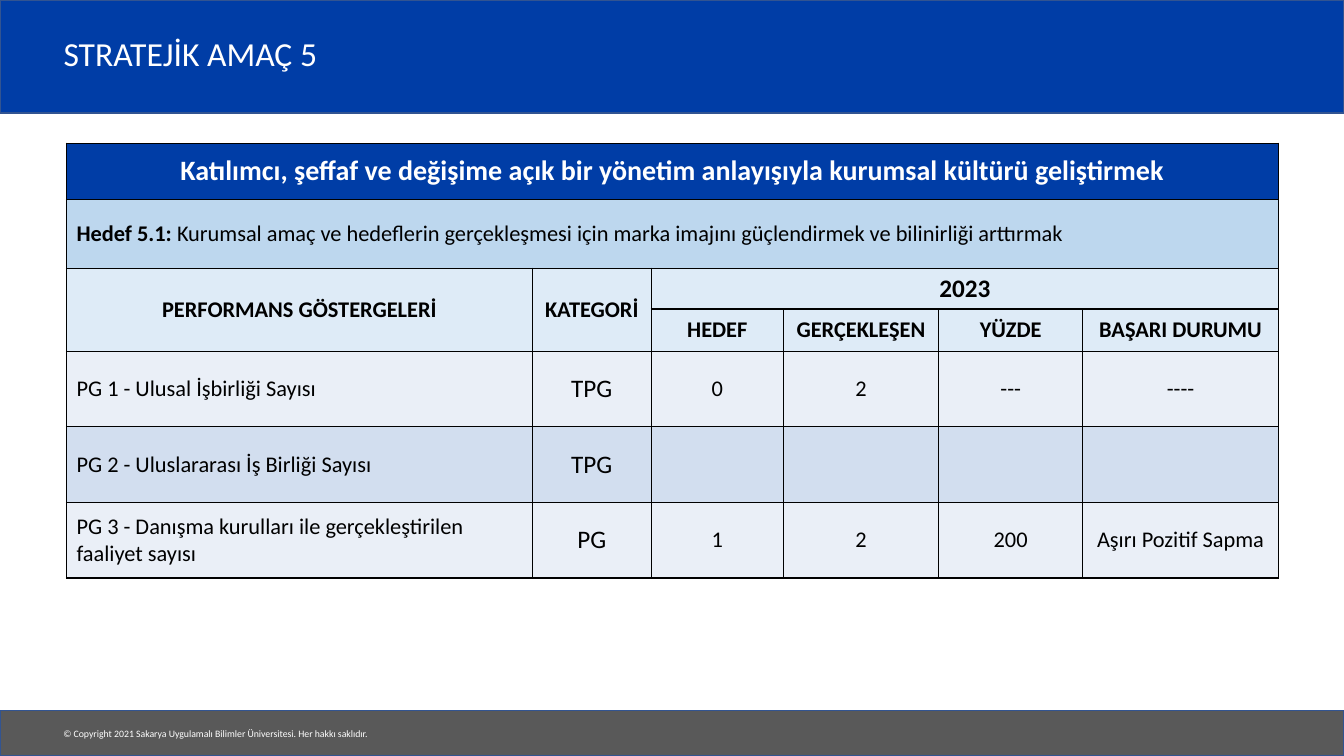
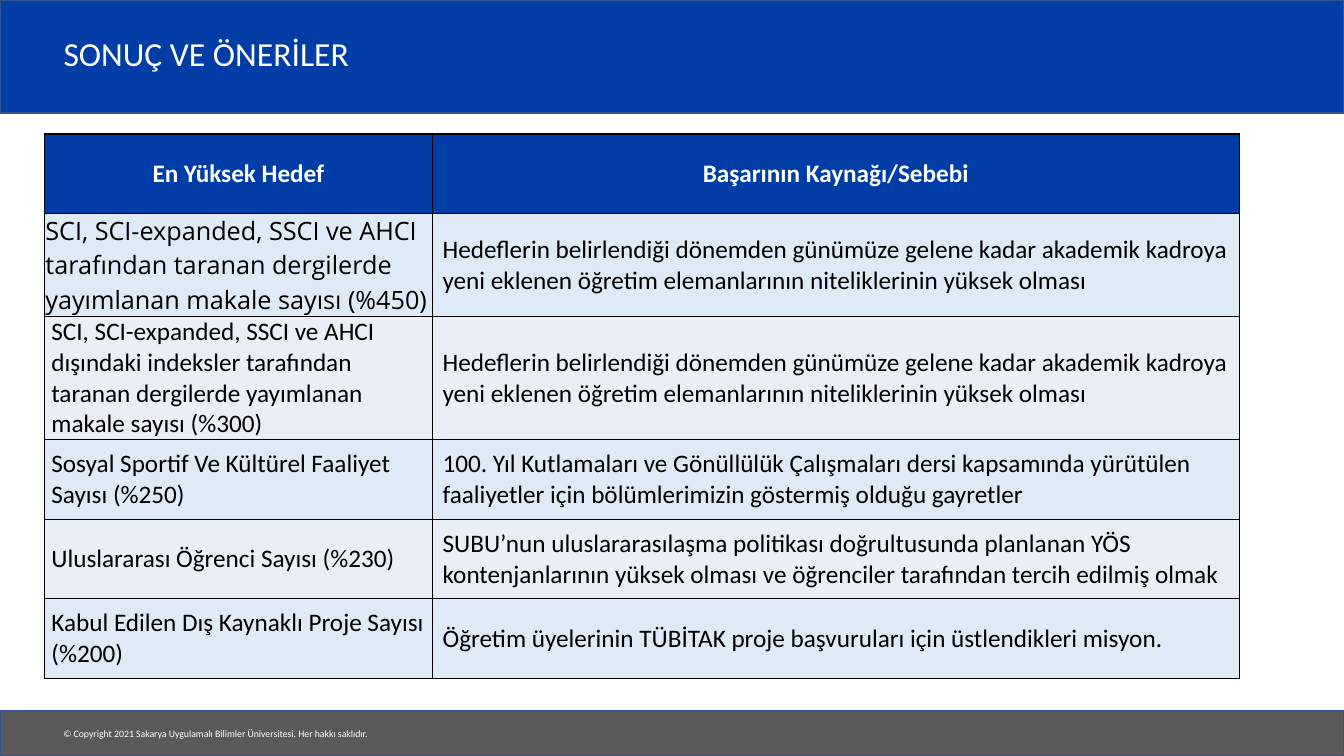
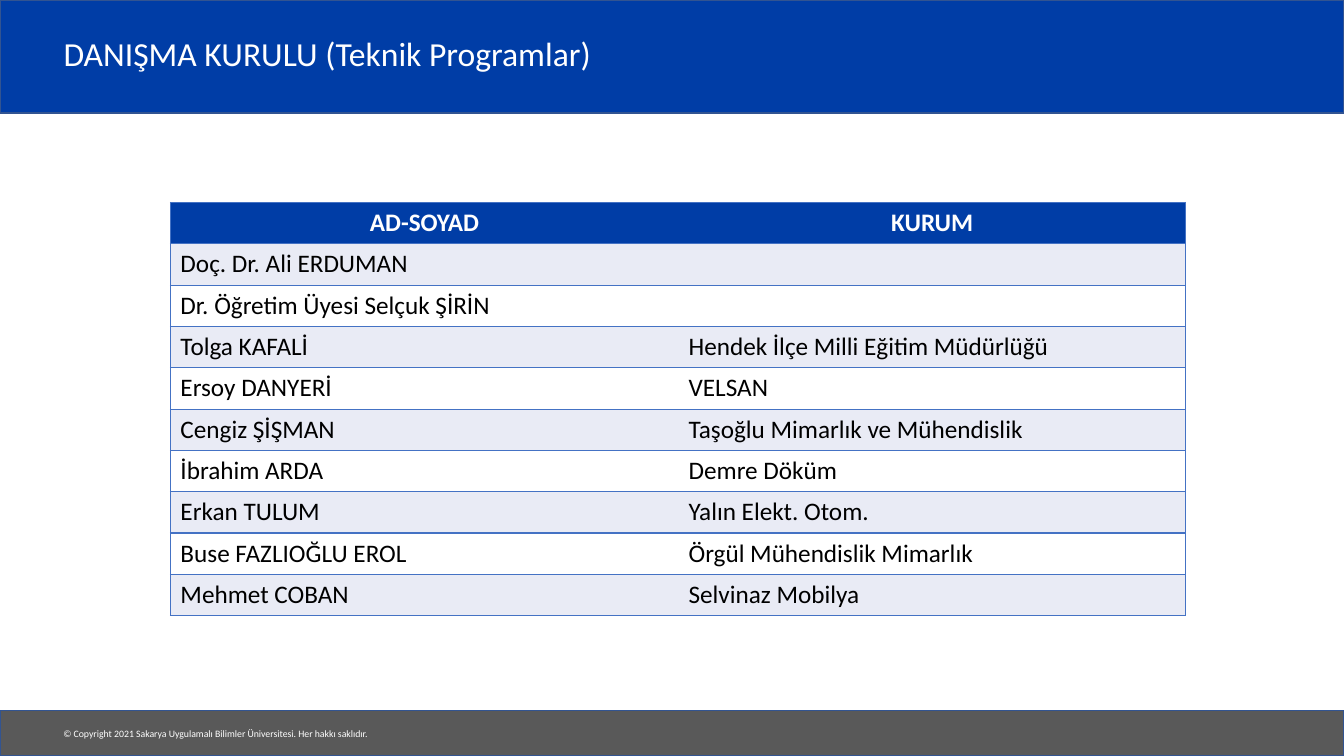
from lxml.etree import SubElement
from pptx import Presentation
from pptx.dml.color import RGBColor
from pptx.enum.shapes import MSO_SHAPE
from pptx.enum.text import MSO_ANCHOR, MSO_AUTO_SIZE, PP_ALIGN
from pptx.oxml.ns import qn
from pptx.util import Inches, Pt

COLORS = {
    "blue": "003DA6", "gray": "595959", "band_line": "325491",
    "white": "FFFFFF", "black": "000000", "sky": "BDD7EE",
    "pale_blue": "DEEBF7", "pale_gray": "EAEFF7", "mid_blue": "D2DEEF",
    "lavender": "E9EBF5", "grid_blue": "4472C4",
}
FONT = "Calibri"
WIDTH, HEIGHT = 13.33, 7.5
CENTER, LEFT = PP_ALIGN.CENTER, PP_ALIGN.LEFT
COPYRIGHT = "© Copyright 2021 Sakarya Uygulamalı Bilimler Üniversitesi. Her hakkı saklıdır."


def color(name):
    return RGBColor.from_string(COLORS[name])


def format_para(para, size, ink="black", bold=False, align=LEFT, face=FONT):
    para.alignment = align
    para.font.name = face
    para.font.size = Pt(size)
    para.font.bold = bold
    para.font.color.rgb = color(ink)


def add_band(page, top, height, fill):
    band = page.shapes.add_shape(
        MSO_SHAPE.RECTANGLE, 0, Inches(top), Inches(WIDTH), Inches(height))
    band.shadow.inherit = False
    band.fill.solid()
    band.fill.fore_color.rgb = color(fill)
    band.line.color.rgb = color("band_line")
    band.line.width = Pt(1)
    return band


def add_copyright(page):
    box = page.shapes.add_textbox(Inches(0.53), Inches(7.17), Inches(3.29), Inches(0.22))
    box.text_frame.word_wrap = False
    para = box.text_frame.paragraphs[0]
    para.text = COPYRIGHT
    format_para(para, 7, "white")
    return box


def furnish_layout(layout, page):
    """Draw the bands and footer on a page, then hand them to its layout."""
    parts = [add_band(page, 0, 1.12, "blue"),
             add_band(page, 7.05, 0.45, "gray"),
             add_copyright(page)]
    for part in parts:
        layout.shapes.element.append(part.element)


def add_page(deck, layout, heading):
    page = deck.slides.add_slide(layout)
    title = page.shapes.title
    title.left, title.top = Inches(0.53), Inches(0.19)
    title.width, title.height = Inches(11.03), Inches(0.73)
    frame = title.text_frame
    frame.text = heading
    frame.auto_size = MSO_AUTO_SIZE.NONE
    frame.vertical_anchor = MSO_ANCHOR.MIDDLE
    format_para(frame.paragraphs[0], 24, "white")
    frame.paragraphs[0].line_spacing = 0.9
    return page


def add_grid(page, left, top, widths, heights):
    frame = page.shapes.add_table(
        len(heights), len(widths), Inches(left), Inches(top),
        Inches(sum(widths)), Inches(sum(heights)))
    table = frame.table
    table.first_row = table.horz_banding = False
    for column, width in zip(table.columns, widths):
        column.width = Inches(width)
    for row, height in zip(table.rows, heights):
        row.height = Inches(height)
    return table


def paint_cell(cell, fill, line, sides="LRTB"):
    """Fill a cell and rule the given sides, leaving the others bare."""
    cell.fill.solid()
    cell.fill.fore_color.rgb = color(fill)
    props = cell._tc.get_or_add_tcPr()
    for index, side in enumerate("LRTB"):
        border = SubElement(props, qn(f"a:ln{side}"), w=str(Pt(1)))
        props.insert(index, border)
        if side in sides:
            solid = SubElement(border, qn("a:solidFill"))
            SubElement(solid, qn("a:srgbClr"), val=COLORS[line])
        else:
            SubElement(border, qn("a:noFill"))


def write_cell(cell, text, size=18, anchor=MSO_ANCHOR.MIDDLE, **style):
    cell.vertical_anchor = anchor
    para = cell.text_frame.paragraphs[0]
    para.text = text
    format_para(para, size, **style)


def set_margins(cell, side, vertical):
    cell.margin_left = cell.margin_right = Inches(side)
    cell.margin_top = cell.margin_bottom = Inches(vertical)


def add_goal_table(page, left, top):
    table = add_grid(page, left, top, [4.62, 1.18, 1.31, 1.54, 1.43, 1.94],
                     [0.56, 0.68, 0.4, 0.42, 0.75, 0.75, 0.75])
    fills = ["blue", "sky", "pale_blue", "pale_blue", "pale_gray", "mid_blue", "pale_gray"]
    for row, fill in zip(table.rows, fills):
        for cell in row.cells:
            paint_cell(cell, fill, "black")
    for first, last in [((0, 0), (0, 5)), ((1, 0), (1, 5)), ((2, 0), (3, 0)),
                        ((2, 1), (3, 1)), ((2, 2), (2, 5))]:
        table.cell(*first).merge(table.cell(*last))

    write_cell(table.cell(0, 0),
               "Katılımcı, şeffaf ve değişime açık bir yönetim anlayışıyla kurumsal kültürü geliştirmek",
               20, ink="white", bold=True, align=CENTER)
    goal = table.cell(1, 0)
    write_cell(goal, "Hedef 5.1: ", 16)
    para = goal.text_frame.paragraphs[0]
    para.runs[0].font.bold = True
    para.add_run().text = ("Kurumsal amaç ve hedeflerin gerçekleşmesi için marka imajını "
                           "güçlendirmek ve bilinirliği arttırmak")

    headings = [(2, 0, "PERFORMANS GÖSTERGELERİ", 16), (2, 1, "KATEGORİ", 16),
                (2, 2, "2023", 18), (3, 2, "HEDEF", 16), (3, 3, "GERÇEKLEŞEN", 16),
                (3, 4, "YÜZDE", 16), (3, 5, "BAŞARI DURUMU", 16)]
    for row, column, text, size in headings:
        write_cell(table.cell(row, column), text, size, bold=True, align=CENTER)

    indicators = [
        ("PG 1 - Ulusal İşbirliği Sayısı", "TPG", "0", "2", "---", "----"),
        ("PG 2 - Uluslararası İş Birliği Sayısı", "TPG"),
        ("PG 3 - Danışma kurulları ile gerçekleştirilen faaliyet sayısı",
         "PG", "1", "2", "200", "Aşırı Pozitif Sapma"),
    ]
    for row, values in enumerate(indicators, 4):
        for column, text in enumerate(values):
            write_cell(table.cell(row, column), text, 18 if column == 1 else 16,
                       align=CENTER if column else LEFT)


def add_result_table(page, left, top):
    staff_reason = ("Hedeflerin belirlendiği dönemden günümüze gelene kadar akademik kadroya "
                    "yeni eklenen öğretim elemanlarının niteliklerinin yüksek olması")
    results = [
        ("En Yüksek Hedef", "Başarının Kaynağı/Sebebi"),
        ("SCI, SCI-expanded, SSCI ve AHCI tarafından taranan dergilerde "
         "yayımlanan makale sayısı (%450)", staff_reason),
        ("SCI, SCI-expanded, SSCI ve AHCI dışındaki indeksler tarafından taranan "
         "dergilerde yayımlanan makale sayısı (%300)", staff_reason),
        ("Sosyal Sportif Ve Kültürel Faaliyet Sayısı (%250)",
         "100. Yıl Kutlamaları ve Gönüllülük Çalışmaları dersi kapsamında yürütülen "
         "faaliyetler için bölümlerimizin göstermiş olduğu gayretler"),
        ("Uluslararası Öğrenci Sayısı (%230)",
         "SUBU’nun uluslararasılaşma politikası doğrultusunda planlanan YÖS "
         "kontenjanlarının yüksek olması ve öğrenciler tarafından tercih edilmiş olmak"),
        ("Kabul Edilen Dış Kaynaklı Proje Sayısı (%200)",
         "Öğretim üyelerinin TÜBİTAK proje başvuruları için üstlendikleri misyon."),
    ]
    table = add_grid(page, left, top, [3.85, 8], [0.79] * len(results))
    for row, texts in enumerate(results):
        fill = "pale_blue" if row % 2 else "pale_gray"
        for column, text in enumerate(texts):
            cell = table.cell(row, column)
            paint_cell(cell, fill if row else "blue", "black")
            if row == 0:
                write_cell(cell, text, ink="white", bold=True, align=CENTER)
            else:
                write_cell(cell, text, face="Open Sans" if (row, column) == (1, 0) else FONT)
        set_margins(table.cell(row, 0), 0.01 if row == 1 else 0.07, 0)


def add_board_table(page, left, top):
    members = [
        ("AD-SOYAD", "KURUM"),
        ("Doç. Dr. Ali ERDUMAN", ""),
        ("Dr. Öğretim Üyesi Selçuk ŞİRİN", ""),
        ("Tolga KAFALİ", "Hendek İlçe Milli Eğitim Müdürlüğü"),
        ("Ersoy DANYERİ", "VELSAN"),
        ("Cengiz ŞİŞMAN", "Taşoğlu Mimarlık ve Mühendislik"),
        ("İbrahim ARDA", "Demre Döküm"),
        ("Erkan TULUM", "Yalın Elekt. Otom."),
        ("Buse FAZLIOĞLU EROL", "Örgül Mühendislik Mimarlık"),
        ("Mehmet COBAN", "Selvinaz Mobilya"),
    ]
    table = add_grid(page, left, top, [5.04, 5.03], [0.41] * len(members))
    for row, texts in enumerate(members):
        fill = "lavender" if row % 2 else "white"
        for column, text in enumerate(texts):
            cell = table.cell(row, column)
            paint_cell(cell, fill if row else "blue", "grid_blue", ("LTB", "RTB")[column])
            if row == 0:
                write_cell(cell, text, anchor=MSO_ANCHOR.TOP, ink="white",
                           bold=True, align=CENTER)
            elif text:
                write_cell(cell, text, anchor=MSO_ANCHOR.TOP)


def main():
    deck = Presentation()
    deck.slide_width, deck.slide_height = Inches(WIDTH), Inches(HEIGHT)
    layout = deck.slide_layouts.get_by_name("Title Only")
    goal_page = add_page(deck, layout, "STRATEJİK AMAÇ 5")
    furnish_layout(layout, goal_page)
    add_goal_table(goal_page, 0.66, 1.42)
    add_result_table(add_page(deck, layout, "SONUÇ VE ÖNERİLER"), 0.44, 1.33)
    add_board_table(add_page(deck, layout, "DANIŞMA KURULU (Teknik Programlar)"), 1.69, 2.01)
    deck.save("out.pptx")


if __name__ == "__main__":
    main()
